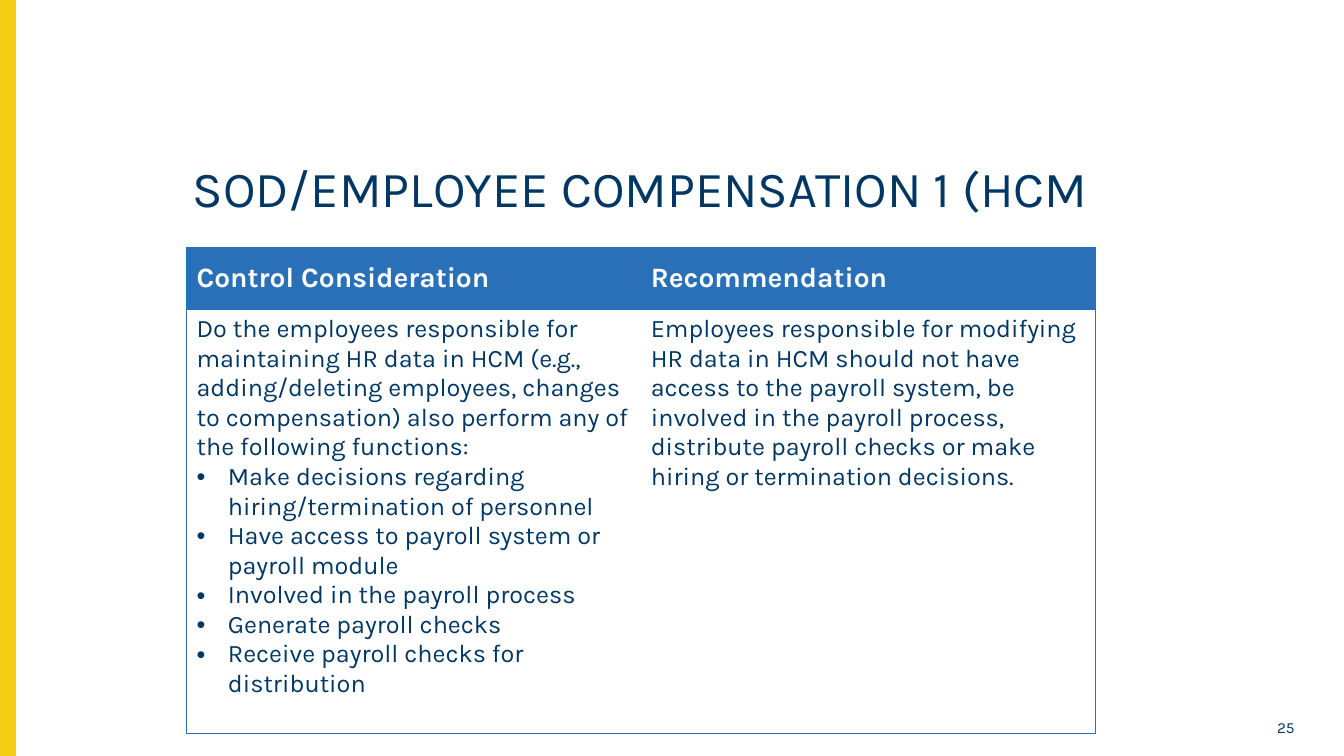
"""Build the segregation of duties slide on employee compensation."""
from lxml.etree import SubElement
from pptx import Presentation
from pptx.dml.color import RGBColor
from pptx.enum.shapes import MSO_SHAPE
from pptx.enum.text import MSO_ANCHOR, PP_ALIGN
from pptx.oxml.ns import qn
from pptx.util import Inches, Pt

COLORS = {"navy": "003764", "blue": "2A70B8", "yellow": "F4CE12", "white": "FFFFFF"}
HEADERS = ["Control Consideration", "Recommendation"]
BODIES = [
    [
        "Do the employees responsible for maintaining HR data in HCM (e.g., adding/deleting "
        "employees, changes to compensation) also perform any of the following functions:",
        "Make decisions regarding hiring/termination of personnel",
        "Have access to payroll system or payroll module",
        "Involved in the payroll process",
        "Generate payroll checks",
        "Receive payroll checks for distribution",
    ],
    [
        "Employees responsible for modifying HR data in HCM should not have access to the "
        "payroll system, be involved in the payroll process, distribute payroll checks or "
        "make hiring or termination decisions.",
    ],
]
ROWS = [[[h] for h in HEADERS], BODIES]
HEIGHTS = [0.62, 4.21]


def style(p, size, color, bold=False):
    for r in p.runs:
        r.font.name, r.font.size, r.font.bold = "Karla", Pt(size), bold
        r.font.color.rgb = RGBColor.from_string(COLORS[color])


def add_text(s, box, text, size, align, anchor):
    tf = s.shapes.add_textbox(*map(Inches, box)).text_frame
    tf.word_wrap = True
    tf.vertical_anchor = anchor
    p = tf.paragraphs[0]
    p.text, p.alignment = text, align
    style(p, size, "navy")
    return p


prs = Presentation()
prs.slide_width, prs.slide_height = Inches(13.33), Inches(7.5)
s = prs.slides.add_slide(prs.slide_layouts[6])

sp = s.shapes.add_shape(MSO_SHAPE.RECTANGLE, 0, 0, Inches(0.15), prs.slide_height)
sp.shadow.inherit = False
sp.fill.solid()
sp.fill.fore_color.rgb = sp.line.color.rgb = RGBColor.from_string(COLORS["yellow"])
sp.line.width = Pt(1)

p = add_text(s, (1.59, 1.58, 9.52, 0.87), "SOD/EMPLOYEE COMPENSATION 1 (HCM", 36,
             PP_ALIGN.CENTER, MSO_ANCHOR.TOP)
p.line_spacing = 0.9

table = s.shapes.add_table(2, 2, Inches(1.85), Inches(2.45), Inches(9.01),
                           Inches(sum(HEIGHTS))).table
for i, row in enumerate(ROWS):
    table.rows[i].height = Inches(HEIGHTS[i])
    for j, texts in enumerate(row):
        cell = table.cell(i, j)
        tcPr = cell._tc.get_or_add_tcPr()
        edges = {"lnL": j == 0, "lnR": j == 1, "lnT": True, "lnB": i == 1}
        for tag, visible in edges.items():
            ln = SubElement(tcPr, qn(f"a:{tag}"), w=str(Pt(0.5)))
            if visible:
                fill = SubElement(ln, qn("a:solidFill"))
                SubElement(fill, qn("a:srgbClr"), val=COLORS["blue"])
            else:
                SubElement(ln, qn("a:noFill"))
        cell.fill.solid()
        cell.fill.fore_color.rgb = RGBColor.from_string(COLORS["white" if i else "blue"])
        cell.vertical_anchor = MSO_ANCHOR.TOP if i else MSO_ANCHOR.MIDDLE
        cell.text_frame.text = "\n".join(texts)
        for n, p in enumerate(cell.text_frame.paragraphs):
            if n:
                pPr = p._p.get_or_add_pPr()
                pPr.set("marL", str(Inches(0.31)))
                pPr.set("indent", str(-Inches(0.31)))
                SubElement(pPr, qn("a:buFont"), typeface="Arial")
                SubElement(pPr, qn("a:buChar"), char="•")
            style(p, 18 if i else 20, "navy" if i else "white", bold=i == 0)

add_text(s, (12.26, 7.09, 0.68, 0.26), "25", 11, PP_ALIGN.RIGHT, MSO_ANCHOR.MIDDLE)

prs.save("out.pptx")
